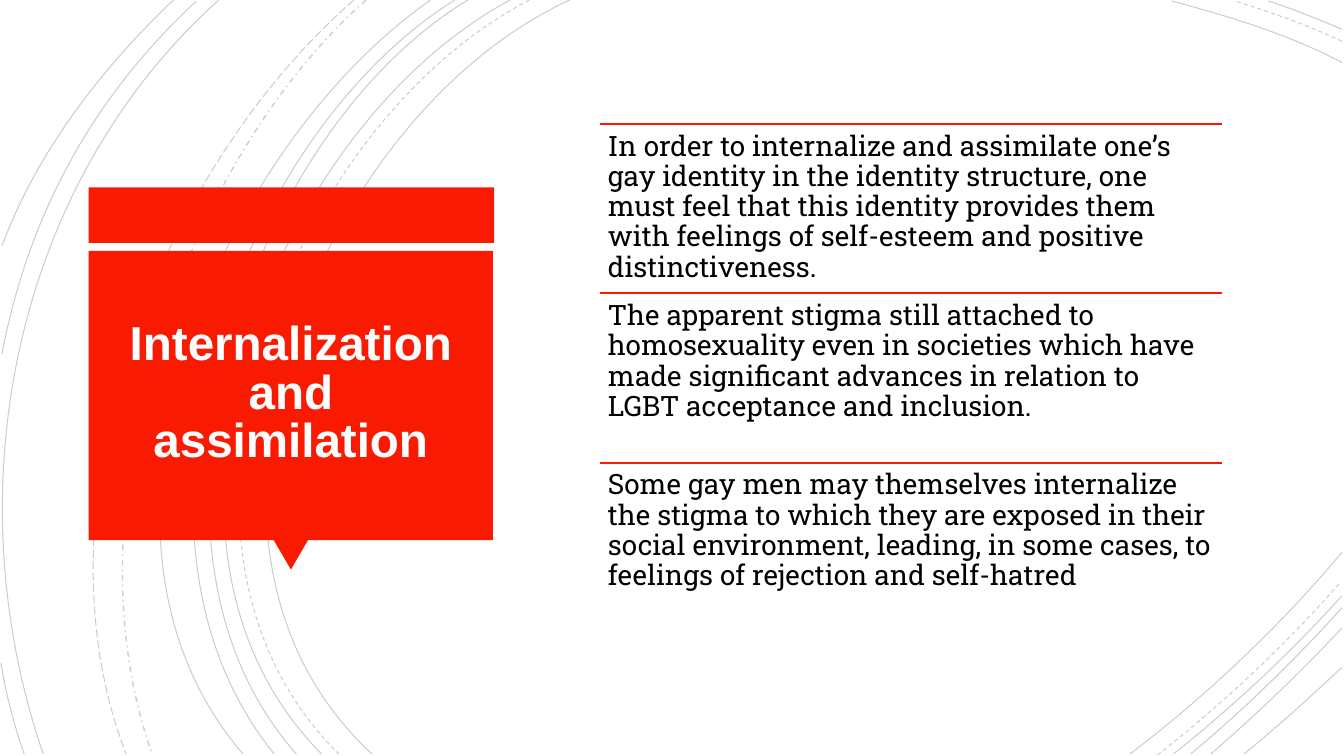
from dataclasses import dataclass

from lxml import etree
from pptx import Presentation
from pptx.dml.color import RGBColor
from pptx.enum.dml import MSO_LINE
from pptx.enum.shapes import MSO_CONNECTOR, MSO_SHAPE
from pptx.enum.text import MSO_ANCHOR, MSO_AUTO_SIZE, PP_ALIGN
from pptx.oxml.ns import qn
from pptx.util import Inches, Pt

SOLID, DASH = MSO_LINE.SOLID, MSO_LINE.DASH
LONG_DASH, DASH_DOT = MSO_LINE.LONG_DASH, MSO_LINE.DASH_DOT
RECTANGLE, TRIANGLE = MSO_SHAPE.RECTANGLE, MSO_SHAPE.ISOSCELES_TRIANGLE
STRAIGHT = MSO_CONNECTOR.STRAIGHT
TOP, MIDDLE = MSO_ANCHOR.TOP, MSO_ANCHOR.MIDDLE
CENTER = PP_ALIGN.CENTER
NO_AUTOFIT = MSO_AUTO_SIZE.NONE

RED, WHITE, BLACK = "F81B02", "FFFEFF", "000000"
TITLE_FONT, BODY_FONT = "Arial", "Roboto Slab"
ARC_OPACITY = 20

POINTS_LEFT, POINTS_TOP, POINTS_WIDTH, POINT_HEIGHT = 5.95, 1.23, 6.17, 1.68

Point = tuple[float, float]


@dataclass
class Arc:
    """Cubic curve: start, two control points, end."""
    start: Point
    control_1: Point
    control_2: Point
    end: Point
    dash: MSO_LINE = SOLID
    weight: float = 0.75


@dataclass
class Block:
    """Filled part of the title callout."""
    kind: MSO_SHAPE
    left: float
    top: float
    width: float
    height: float
    rotation: float = 0


ARCS = [
    # Large arcs on the left
    Arc((5.65, 0), (3.15, 1.15), (1.43, 5.4), (3.69, 7.48)),
    Arc((5.25, 0), (2.85, 1.25), (1.23, 5.37), (3.36, 7.48), DASH),
    Arc((5.06, 0), (2.7, 1.27), (1.1, 5.37), (3.19, 7.48)),
    Arc((4.64, 0), (2.44, 1.33), (1.1, 5.41), (2.94, 7.48)),
    Arc((4.51, 0), (2.31, 1.38), (0.97, 5.33), (2.72, 7.48)),
    Arc((4.27, 0), (2.17, 1.47), (0.53, 5.29), (2.41, 7.48)),
    Arc((3.63, 0), (1.76, 1.66), (0.65, 5.09), (1.51, 7.48), DASH_DOT, 1),
    Arc((3.51, 0), (1.57, 1.69), (0.29, 4.99), (1.25, 7.48), LONG_DASH),
    Arc((2.17, 0), (0.11, 1.85), (-0.46, 4.9), (0.43, 7.48)),
    Arc((1.95, 0.01), (0.92, 0.96), (0.28, 2.14), (0.02, 3.51)),
    Arc((0.01, 6.58), (0.06, 6.89), (0.14, 7.19), (0.24, 7.48)),
    Arc((1.72, 0), (1, 0.69), (0.37, 1.5), (0.02, 2.44)),
    # Top right corner
    Arc((13.31, 0.62), (12.78, 0.34), (12.18, 0.16), (11.62, 0.01)),
    Arc((13.31, 0.41), (12.97, 0.25), (12.6, 0.12), (12.25, 0.01), DASH),
    Arc((13.31, 0.29), (13.07, 0.19), (12.83, 0.09), (12.58, 0.01)),
    # Bottom right corner
    Arc((11.21, 7.48), (11.97, 6.9), (12.69, 6.22), (13.31, 5.48)),
    Arc((11.48, 7.49), (12.13, 6.98), (12.75, 6.4), (13.3, 5.77), DASH),
    Arc((11.64, 7.48), (12.23, 7.01), (12.8, 6.48), (13.31, 5.91)),
    Arc((11.81, 7.48), (12.34, 7.04), (12.84, 6.55), (13.31, 6.03)),
    Arc((12.01, 7.48), (12.46, 7.09), (12.9, 6.67), (13.31, 6.23)),
    Arc((12.34, 7.48), (12.67, 7.21), (12.99, 6.92), (13.31, 6.62)),
]

CALLOUT = [
    Block(RECTANGLE, 0.88, 1.86, 4.02, 0.55),
    Block(TRIANGLE, 2.71, 5.35, 0.35, 0.3, 180),
    Block(RECTANGLE, 0.88, 2.49, 4.01, 2.87),
]

POINTS = [
    "In order to internalize and assimilate one’s gay identity in the identity "
    "structure, one must feel that this identity provides them with feelings of "
    "self-esteem and positive distinctiveness.",
    "The apparent stigma still attached to homosexuality even in societies which "
    "have made significant advances in relation to LGBT acceptance and inclusion.",
    "Some gay men may themselves internalize the stigma to which they are exposed "
    "in their social environment, leading, in some cases, to feelings of rejection "
    "and self-hatred",
]


def paint(color_format, color: str) -> None:
    color_format.rgb = RGBColor.from_string(color)


def draw_arc(group, arc: Arc) -> None:
    corners = (arc.start, arc.control_1, arc.control_2, arc.end)
    points = [(Inches(x), Inches(y)) for x, y in corners]
    builder = group.shapes.build_freeform(*points[0])
    builder.add_line_segments(points[1:], close=False)
    shape = builder.convert_to_shape()
    # Join the three segments into one cubic curve
    segments = list(shape._element.iter(qn("a:lnTo")))
    outline = segments[0].getparent()
    curve = etree.SubElement(outline, qn("a:cubicBezTo"))
    for segment in segments:
        curve.append(segment[0])
        outline.remove(segment)
    shape.shadow.inherit = False
    shape.fill.background()
    shape.line.width = Pt(arc.weight)
    shape.line.dash_style = arc.dash
    paint(shape.line.color, BLACK)
    line_color = shape.line._ln.find(".//" + qn("a:srgbClr"))
    etree.SubElement(line_color, qn("a:alpha"), val=str(ARC_OPACITY * 1000))


def draw_block(group, block: Block) -> None:
    shape = group.shapes.add_shape(block.kind, Inches(block.left), Inches(block.top),
                                   Inches(block.width), Inches(block.height))
    shape.rotation = block.rotation
    shape.shadow.inherit = False
    shape.fill.solid()
    paint(shape.fill.fore_color, RED)
    shape.line.fill.background()


def write(shape, text: str, font_name: str, size: float, color: str,
          spacing: float, inset: float, anchor: MSO_ANCHOR):
    frame = shape.text_frame
    frame.word_wrap = True
    frame.auto_size = NO_AUTOFIT
    frame.vertical_anchor = anchor
    frame.margin_left = frame.margin_right = Inches(inset)
    frame.margin_top = frame.margin_bottom = Inches(inset)
    frame.text = text
    paragraph = frame.paragraphs[0]
    paragraph.line_spacing = spacing
    paragraph.font.name = font_name
    paragraph.font.size = Pt(size)
    paint(paragraph.font.color, color)
    return paragraph


def draw_title(slide) -> None:
    title = slide.shapes.title
    title.left, title.top = Inches(0.97), Inches(2.57)
    title.width, title.height = Inches(3.83), Inches(2.69)
    paragraph = write(title, "Internalization and assimilation", TITLE_FONT, 34,
                      WHITE, 0.85, 0.25, MIDDLE)
    paragraph.alignment = CENTER
    paragraph.font.bold = True


def draw_point(group, text: str, top: float) -> None:
    left, right = Inches(POINTS_LEFT), Inches(POINTS_LEFT + POINTS_WIDTH)
    rule = group.shapes.add_connector(STRAIGHT, left, Inches(top), right, Inches(top))
    paint(rule.line.color, RED)
    rule.line.width = Pt(1.25)
    etree.SubElement(rule._element.spPr, qn("a:effectLst"))
    box = group.shapes.add_textbox(left, Inches(top), Inches(POINTS_WIDTH),
                                   Inches(POINT_HEIGHT))
    write(box, text, BODY_FONT, 20, BLACK, 0.9, 0.08, TOP)


def main() -> None:
    presentation = Presentation()
    presentation.slide_width = Inches(13.33)
    presentation.slide_height = Inches(7.5)
    layout = presentation.slide_layouts.get_by_name("Title Only")
    slide = presentation.slides.add_slide(layout)

    # Background arcs and title callout, which belong to the layout
    arcs_group = slide.shapes.add_group_shape()
    for arc in ARCS:
        draw_arc(arcs_group, arc)
    callout_group = slide.shapes.add_group_shape()
    for block in CALLOUT:
        draw_block(callout_group, block)
    for group in (arcs_group, callout_group):
        layout.shapes._spTree.append(group._element)

    # Title
    draw_title(slide)

    # Ruled points
    points_group = slide.shapes.add_group_shape()
    for index, text in enumerate(POINTS):
        draw_point(points_group, text, POINTS_TOP + index * POINT_HEIGHT)

    presentation.save("out.pptx")


if __name__ == "__main__":
    main()
